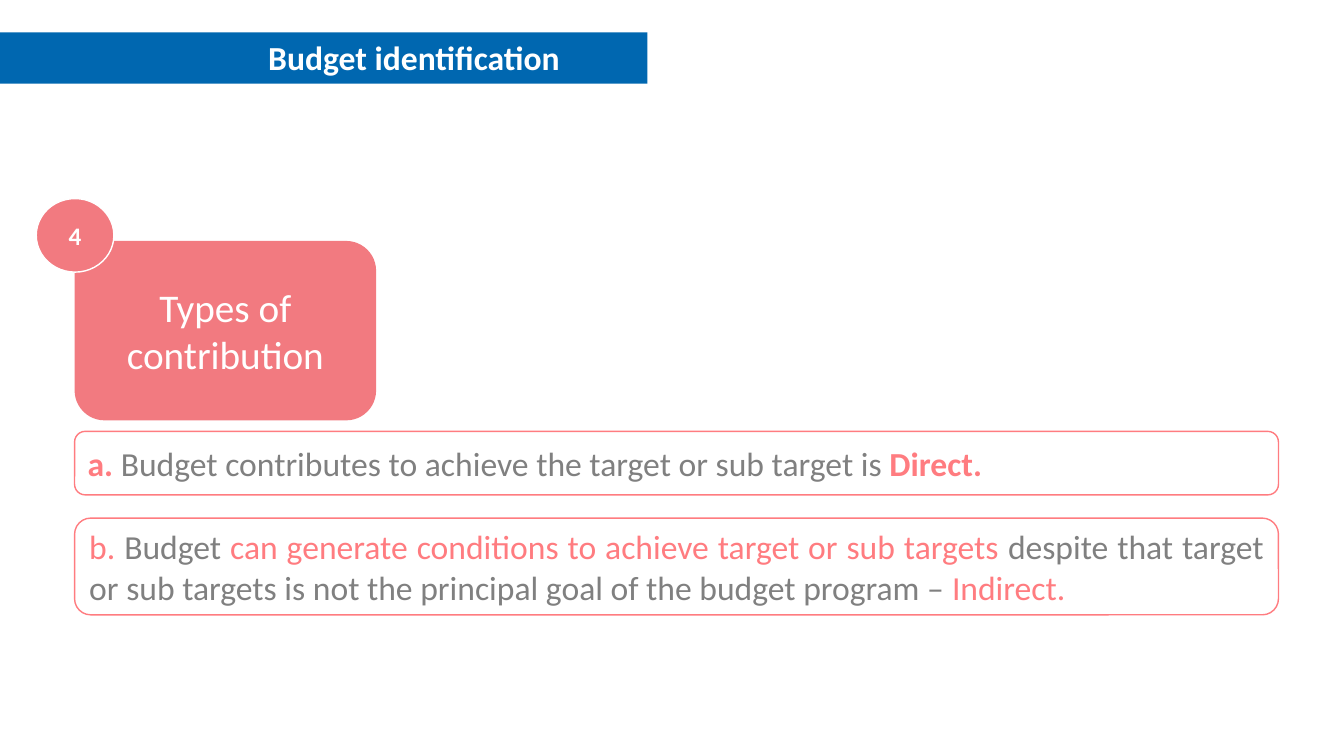
from dataclasses import dataclass

from pptx import Presentation
from pptx import util as u
from pptx.dml.color import RGBColor
from pptx.enum import shapes, text


@dataclass(frozen=True)
class Theme:
    font: str = "Calibri"
    blue: str = "0067B0"
    coral: str = "F27A80"
    accent: str = "FF7C80"
    gray: str = "808080"
    white: str = "FFFFFF"
    card_size: int = 28
    body_size: int = 24
    badge_size: int = 18


class SlideBuilder:
    def __init__(self, slide, theme):
        self.slide = slide
        self.theme = theme

    def add_shape(self, kind, box, fill=None, line=None):
        shape = self.slide.shapes.add_shape(kind, *map(u.Inches, box))
        shape.shadow.inherit = False
        if fill:
            shape.fill.solid()
            shape.fill.fore_color.rgb = RGBColor.from_string(fill)
        else:
            shape.fill.background()
        if line:
            shape.line.color.rgb = RGBColor.from_string(line)
            shape.line.width = u.Pt(1)
        else:
            shape.line.fill.background()
        return shape

    def add_text_box(self, box):
        return self.slide.shapes.add_textbox(*map(u.Inches, box))

    def add_runs(self, shape, runs, size, align, anchor=text.MSO_ANCHOR.MIDDLE):
        """Fill the shape with one paragraph of (words, color, bold) runs."""
        frame = shape.text_frame
        frame.word_wrap = True
        frame.vertical_anchor = anchor
        paragraph = frame.paragraphs[0]
        paragraph.alignment = align
        for words, color, bold in runs:
            run = paragraph.add_run()
            run.text = words
            run.font.name = self.theme.font
            run.font.size = u.Pt(size)
            run.font.bold = bold
            run.font.color.rgb = RGBColor.from_string(color)

    def add_statement(self, top, height, runs):
        box = self.add_shape(shapes.MSO_SHAPE.ROUNDED_RECTANGLE,
                             (0.74, top, 11.94, height), line=self.theme.accent)
        self.add_runs(box, runs, self.theme.body_size, text.PP_ALIGN.JUSTIFY)

    def add_card(self, number, title):
        theme = self.theme
        card = self.add_shape(shapes.MSO_SHAPE.ROUNDED_RECTANGLE,
                              (0.74, 2.39, 2.99, 1.78), theme.coral)
        self.add_runs(card, [(title, theme.white, False)], theme.card_size,
                      text.PP_ALIGN.CENTER)
        badge = self.add_shape(shapes.MSO_SHAPE.OVAL, (0.36, 1.97, 0.77, 0.73),
                               theme.coral, theme.white)
        self.add_runs(badge, [(number, theme.white, True)], theme.badge_size,
                      text.PP_ALIGN.CENTER)

    def add_banner(self, title):
        theme = self.theme
        self.add_shape(shapes.MSO_SHAPE.RECTANGLE, (0, 0.32, 6.42, 0.51), theme.blue)
        heading = self.add_text_box((0, 0.32, 5.65, 0.5))
        self.add_runs(heading, [(title, theme.white, True)], theme.body_size,
                      text.PP_ALIGN.RIGHT, text.MSO_ANCHOR.TOP)
        heading.text_frame.auto_size = text.MSO_AUTO_SIZE.SHAPE_TO_FIT_TEXT


def main():
    presentation = Presentation()
    presentation.slide_width = u.Inches(13.33)
    presentation.slide_height = u.Inches(7.5)
    slide = presentation.slides.add_slide(presentation.slide_layouts[6])
    theme = Theme()
    builder = SlideBuilder(slide, theme)

    builder.add_card("4", "Types of contribution")
    builder.add_statement(4.28, 0.63, [
        ("a. ", theme.accent, True),
        ("Budget contributes to achieve the target or sub target is ", theme.gray, False),
        ("Direct.", theme.accent, True),
    ])
    builder.add_statement(5.14, 0.96, [
        ("b. ", theme.accent, False),
        ("Budget ", theme.gray, False),
        ("can generate conditions to achieve target or sub targets ", theme.accent, False),
        ("despite that target or sub targets is not the principal goal "
         "of the budget program – ", theme.gray, False),
        ("Indirect.", theme.accent, False),
    ])
    builder.add_banner("Budget identification")
    presentation.save("out.pptx")


if __name__ == "__main__":
    main()
